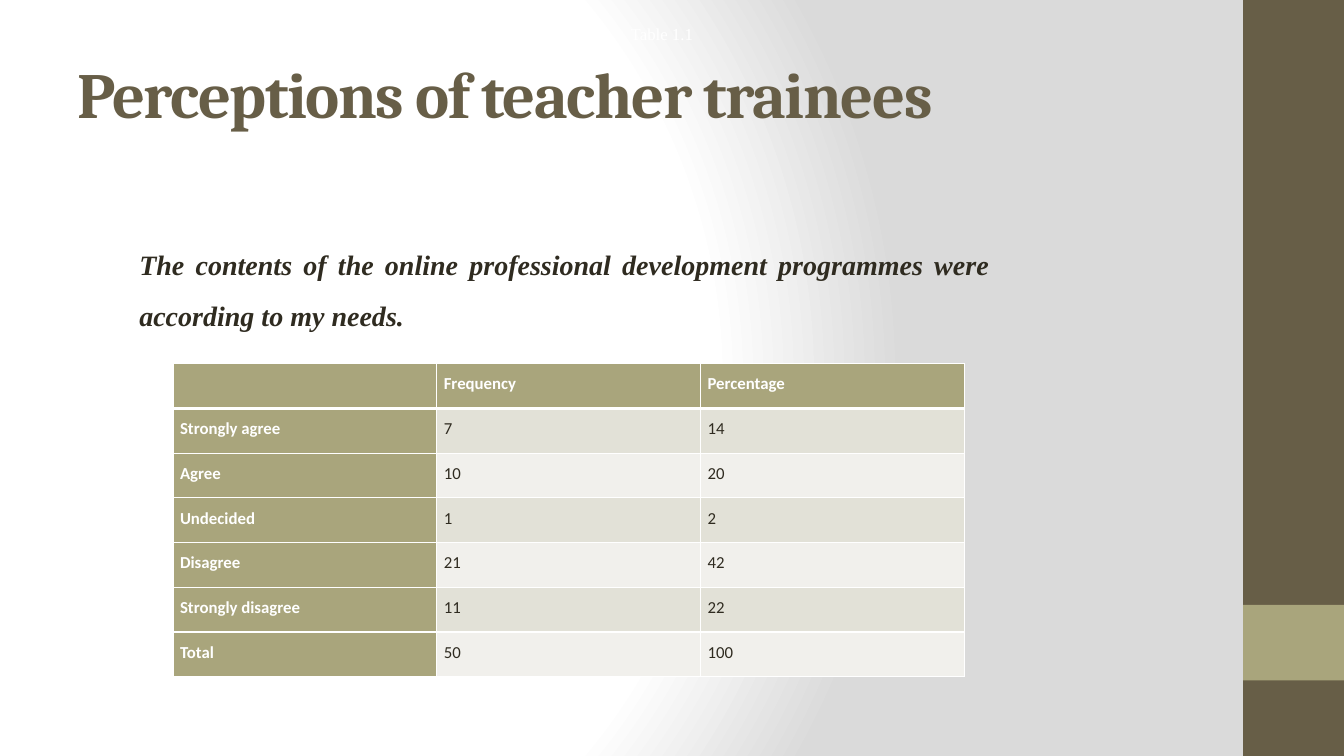
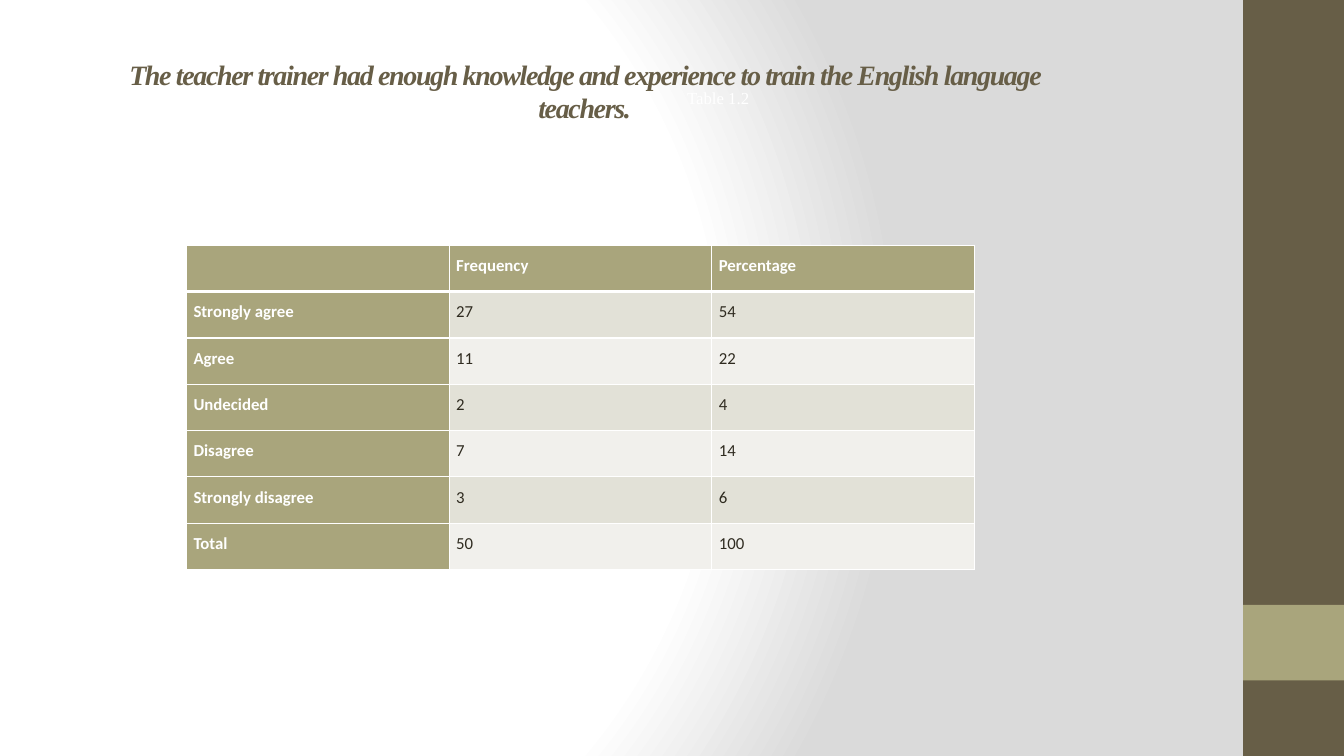
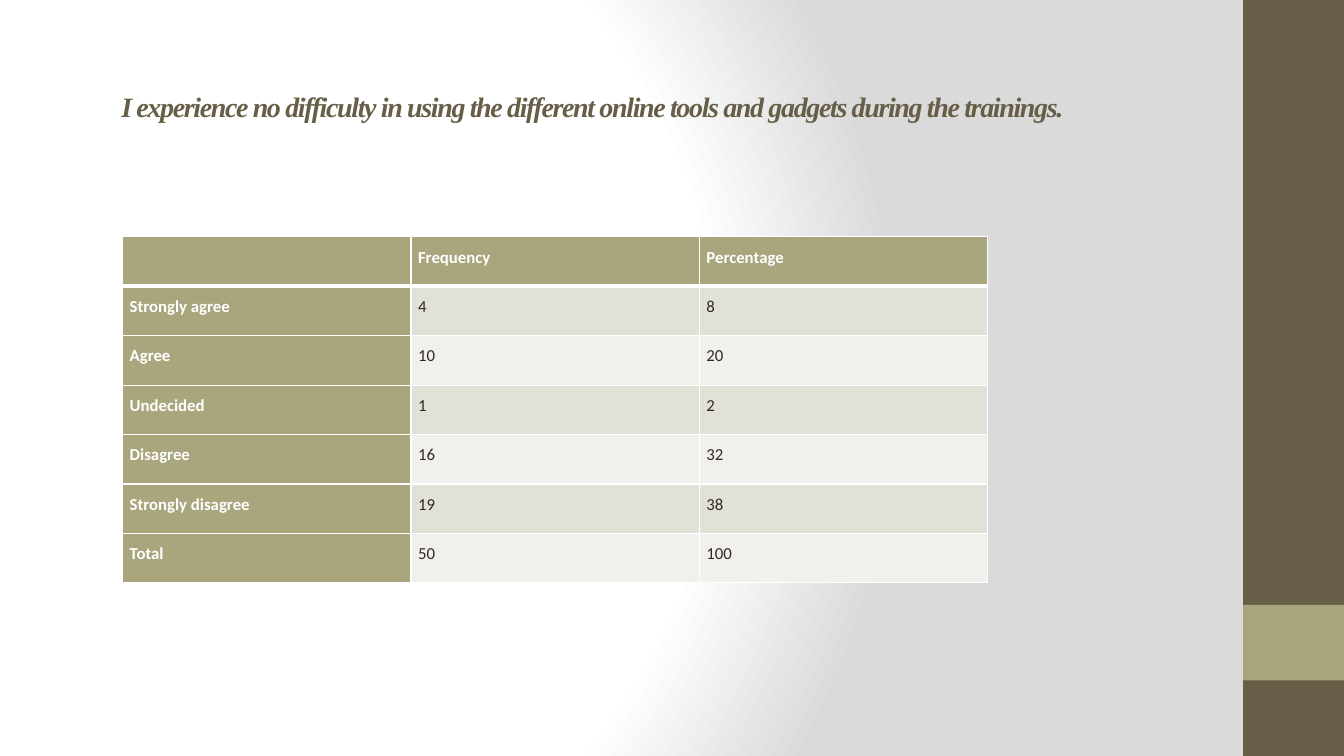
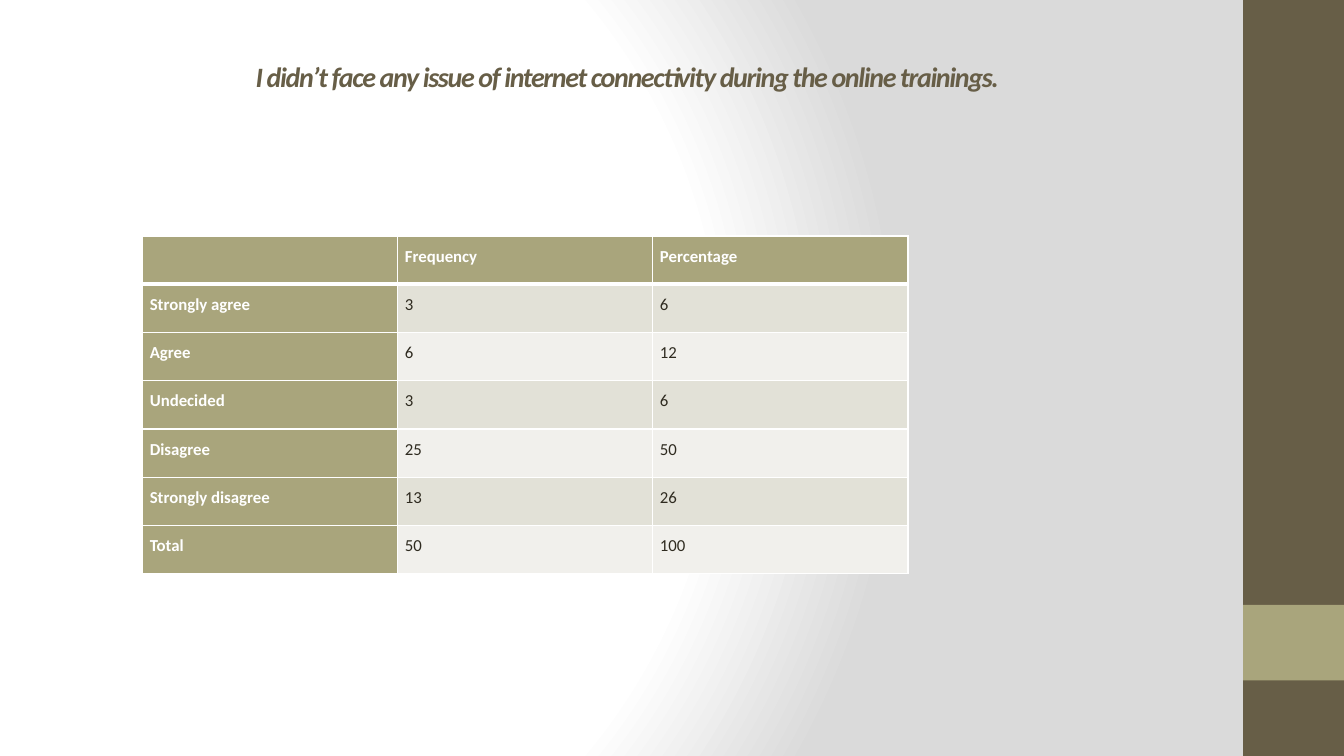
from dataclasses import dataclass
from typing import Optional

from pptx import Presentation
from pptx.dml.color import RGBColor
from pptx.enum.shapes import MSO_SHAPE
from pptx.enum.text import MSO_ANCHOR, MSO_AUTO_SIZE, PP_ALIGN
from pptx.oxml import parse_xml
from pptx.oxml.ns import nsdecls, qn
from pptx.util import Emu, Inches, Pt

COLUMN_COUNT, ROW_COUNT = 160, 90
CELL = Inches(1) // 12
COLORS = {
    "brown": "675E47",
    "olive": "A9A57C",
    "ink": "2F2B20",
    "white": "FFFFFF",
    "gray": "DADADA",
    "band_dark": "E2E1D7",
    "band_light": "F1F0EC",
}
HEADINGS = ("", "Frequency", "Percentage")
ANSWERS = ("Strongly agree", "Agree", "Undecided", "Disagree", "Strongly disagree", "Total")


@dataclass(frozen=True)
class Box:
    column: float
    row: float
    columns: float
    rows: float

    def lengths(self) -> tuple[Emu, ...]:
        return tuple(Emu(round(value * CELL)) for value in
                     (self.column, self.row, self.columns, self.rows))


@dataclass(frozen=True)
class TextStyle:
    font: str
    size: float
    color: str
    bold: bool = False
    italic: bool = False
    spacing: int = 0


@dataclass(frozen=True)
class Caption:
    text: str
    box: Box


@dataclass(frozen=True)
class SurveySlide:
    title: str
    title_style: TextStyle
    table_box: Box
    frequencies: tuple[int, ...]
    percentages: tuple[int, ...]
    title_box: Optional[Box] = None
    alignment: PP_ALIGN = PP_ALIGN.CENTER
    bottom_inset: float = 0.38
    caption: Optional[Caption] = None
    statement: Optional[Caption] = None


TITLE_BOX = Box(8, 3.6, 133.3, 15)
BANDS = ((Box(148, 0, 12, 90), "brown"), (Box(148, 72, 12, 9), "olive"))
HEADLINE = TextStyle("Cambria", 46, "brown", bold=True, spacing=-100)
SERIF_TITLE = TextStyle("Times New Roman", 20, "brown", True, True, -100)
SANS_TITLE = TextStyle("Calibri", 20, "brown", True, True, -100)
STATEMENT = TextStyle("Times New Roman", 20, "ink", True, True)
CAPTION = TextStyle("Times New Roman", 12, "white")
TABLE_HEAD = TextStyle("Calibri", 12, "white", bold=True)
TABLE_BODY = TextStyle("Calibri", 12, "ink")

SLIDES = (
    SurveySlide(
        "Perceptions of teacher trainees", HEADLINE, Box(20.6, 43.3, 94.2, 37.3),
        (7, 10, 1, 21, 11, 50), (14, 20, 2, 42, 22, 100),
        alignment=PP_ALIGN.LEFT, bottom_inset=0.05,
        caption=Caption("Table 1.1", Box(72.8, 2.2, 12, 3.6)),
        statement=Caption(
            "The contents of the online professional development programmes "
            "were according to my needs.", Box(15.4, 26.9, 103.6, 13.3)),
    ),
    SurveySlide(
        "The teacher trainer had enough knowledge and experience to train "
        "the English language teachers.", SERIF_TITLE, Box(22.2, 29.2, 93.8, 38.6),
        (27, 11, 2, 7, 3, 50), (54, 22, 4, 14, 6, 100),
        title_box=Box(11, 4.1, 117.2, 17.4),
        caption=Caption("Table 1.2", Box(79.5, 9.9, 12, 3.6)),
    ),
    SurveySlide(
        "I experience no difficulty in using the different online tools "
        "and gadgets during the trainings.", SERIF_TITLE, Box(14.6, 28.2, 103, 41.2),
        (4, 10, 1, 16, 19, 50), (8, 20, 2, 32, 38, 100),
        title_box=Box(11.9, 5.9, 117.2, 17.4),
    ),
    SurveySlide(
        "I didn’t face any issue of internet connectivity during the online trainings.",
        SANS_TITLE, Box(17, 28.1, 91.1, 40.2),
        (3, 6, 3, 25, 13, 50), (6, 12, 6, 50, 26, 100),
    ),
)


def rgb(name: str) -> RGBColor:
    return RGBColor.from_string(COLORS[name])


def place(shape, box: Box) -> None:
    shape.left, shape.top, shape.width, shape.height = box.lengths()


def write(paragraph, text: str, style: TextStyle, alignment: PP_ALIGN,
          line_spacing: float = 1.0) -> None:
    paragraph.alignment = alignment
    paragraph.line_spacing = line_spacing
    run = paragraph.add_run()
    run.text = text
    font = run.font
    font.name, font.size = style.font, Pt(style.size)
    font.bold, font.italic = style.bold, style.italic
    font.color.rgb = rgb(style.color)
    if style.spacing:
        font._element.set("spc", str(style.spacing))


def set_background(master) -> None:
    master.background.fill.solid()
    properties = master.element.find(".//" + qn("p:bgPr"))
    stops = "".join(
        f'<a:gs pos="{position * 1000}"><a:srgbClr val="{COLORS[color]}"/></a:gs>'
        for position, color in ((0, "white"), (75, "white"), (100, "gray")))
    properties.replace(properties[0], parse_xml(
        f'<a:gradFill {nsdecls("a")} rotWithShape="1"><a:gsLst>{stops}</a:gsLst>'
        '<a:path path="circle"><a:fillToRect l="20000" t="50000" r="100000" b="50000"/>'
        '</a:path></a:gradFill>'))


def add_master_bands(master, slide) -> None:
    for index, (box, color) in enumerate(BANDS):
        shape = slide.shapes.add_shape(MSO_SHAPE.RECTANGLE, *box.lengths())
        shape.shadow.inherit = False
        shape.fill.solid()
        shape.fill.fore_color.rgb = rgb(color)
        shape.line.fill.background()
        master.element.cSld.spTree.insert(2 + index, shape.element)


def add_title(slide, survey: SurveySlide) -> None:
    title = slide.shapes.title
    if survey.title_box:
        place(title, survey.title_box)
    frame = title.text_frame
    frame.auto_size = MSO_AUTO_SIZE.NONE
    frame.vertical_anchor = MSO_ANCHOR.MIDDLE
    frame.margin_bottom = Inches(survey.bottom_inset)
    write(frame.paragraphs[0], survey.title, survey.title_style, survey.alignment)


def add_text(slide, caption: Caption, style: TextStyle, alignment: PP_ALIGN,
             anchor: MSO_ANCHOR, line_spacing: float = 1.0) -> None:
    frame = slide.shapes.add_textbox(*caption.box.lengths()).text_frame
    frame.word_wrap = True
    frame.vertical_anchor = anchor
    write(frame.paragraphs[0], caption.text, style, alignment, line_spacing)


def set_borders(cell, row: int) -> None:
    widths = {"L": 1, "R": 1, "T": 3 if row == 1 else 1, "B": 3 if row == 0 else 1}
    properties = cell._tc.get_or_add_tcPr()
    for index, (side, width) in enumerate(widths.items()):
        properties.insert(index, parse_xml(
            f'<a:ln{side} {nsdecls("a")} w="{Pt(width)}"><a:solidFill>'
            f'<a:srgbClr val="{COLORS["white"]}"/></a:solidFill></a:ln{side}>'))


def add_survey_table(slide, survey: SurveySlide) -> None:
    records = (HEADINGS, *zip(ANSWERS, survey.frequencies, survey.percentages))
    table = slide.shapes.add_table(
        len(records), len(HEADINGS), *survey.table_box.lengths()).table
    for row, record in enumerate(records):
        for column, value in enumerate(record):
            cell = table.cell(row, column)
            is_heading = row == 0 or column == 0
            band = "band_dark" if row % 2 else "band_light"
            cell.fill.solid()
            cell.fill.fore_color.rgb = rgb("olive" if is_heading else band)
            cell.margin_left = cell.margin_right = Inches(0.07)
            cell.margin_top = cell.margin_bottom = 0
            set_borders(cell, row)
            if value != "":
                write(cell.text_frame.paragraphs[0], str(value),
                      TABLE_HEAD if is_heading else TABLE_BODY, PP_ALIGN.JUSTIFY, 1.5)


def main() -> None:
    presentation = Presentation()
    presentation.slide_width = COLUMN_COUNT * CELL
    presentation.slide_height = ROW_COUNT * CELL
    master = presentation.slide_master
    layout = presentation.slide_layouts.get_by_name("Title Only")
    set_background(master)
    place(layout.placeholders[0], TITLE_BOX)
    for index, survey in enumerate(SLIDES):
        slide = presentation.slides.add_slide(layout)
        if index == 0:
            add_master_bands(master, slide)
        add_title(slide, survey)
        add_survey_table(slide, survey)
        if survey.caption:
            add_text(slide, survey.caption, CAPTION, PP_ALIGN.CENTER, MSO_ANCHOR.MIDDLE)
        if survey.statement:
            add_text(slide, survey.statement, STATEMENT, PP_ALIGN.JUSTIFY,
                     MSO_ANCHOR.TOP, 1.5)
    presentation.save("out.pptx")


if __name__ == "__main__":
    main()
